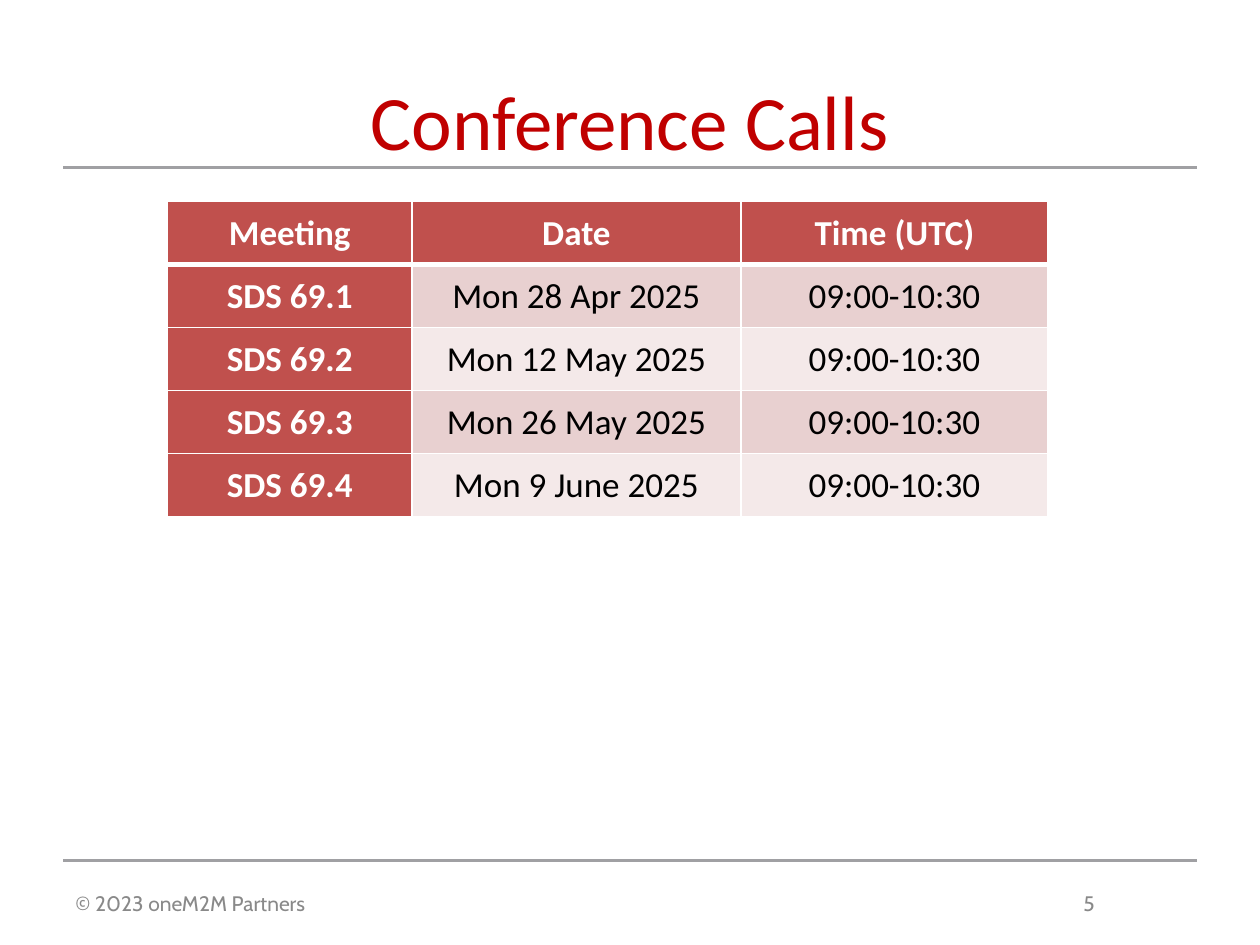
"""Build the conference calls slide with its schedule table."""
import pptx
import pptx.dml.color
import pptx.enum.shapes
import pptx.enum.text
import pptx.oxml
import pptx.util
import lxml.etree

NS = "http://schemas.openxmlformats.org/drawingml/2006/main"
Inches, Pt = pptx.util.Inches, pptx.util.Pt
PP_ALIGN, MSO_ANCHOR = pptx.enum.text.PP_ALIGN, pptx.enum.text.MSO_ANCHOR


def rgb(value):
    return pptx.dml.color.RGBColor.from_string(value)


def style(p, name, size, color, bold=False):
    for r in p.runs:
        r.font.name, r.font.size, r.font.bold = name, Pt(size), bold
        r.font.color.rgb = rgb(color)


prs = pptx.Presentation()
prs.slide_width, prs.slide_height = Inches(10), Inches(7.5)
W, H = prs.slide_width, prs.slide_height
left, right = int(W * 0.05), int(W * 0.95)
top_rule, bottom_rule = Inches(1.33), Inches(6.83)
s = prs.slides.add_slide(prs.slide_layouts[6])

for y in (bottom_rule, top_rule):
    line = s.shapes.add_connector(pptx.enum.shapes.MSO_CONNECTOR.STRAIGHT, left, y, right, y)
    line.line.color.rgb = rgb("A0A0A3")
    line.line.width = Pt(1.75)
    lxml.etree.SubElement(line._element.spPr, f"{{{NS}}}effectLst")

title = s.shapes.add_textbox(left, Inches(0.5), right - left, Inches(1.25))
tf = title.text_frame
tf.word_wrap = True
tf.margin_top = Inches(0.08)
tf.text = "Conference Calls"
p = tf.paragraphs[0]
p.alignment = PP_ALIGN.CENTER
style(p, "Calibri", 44, "C00000")

footer = s.shapes.add_textbox(left, bottom_rule, right - left, H - bottom_rule)
tf = footer.text_frame
tf.word_wrap = True
tf.vertical_anchor = MSO_ANCHOR.MIDDLE
tf.text = "© 2023 oneM2M Partners\t5"
p = tf.paragraphs[0]
tabs = lxml.etree.SubElement(p._p.get_or_add_pPr(), f"{{{NS}}}tabLst")
lxml.etree.SubElement(tabs, f"{{{NS}}}tab", pos=str(Inches(8)), algn="l")
style(p, "Cabin", 12, "898989")

dates = ["Mon 28 Apr 2025", "Mon 12 May 2025", "Mon 26 May 2025", "Mon 9 June 2025"]
rows = [["Meeting", "Date", "Time (UTC)"]]
rows += [[f"SDS 69.{n}", date, "09:00-10:30"] for n, date in enumerate(dates, 1)]
widths = [1.94, 2.61, 2.44]
row_height = 0.5

frame = s.shapes.add_table(len(rows), len(widths), Inches(1.33), Inches(1.6),
                           Inches(sum(widths)), Inches(row_height * len(rows)))
table = frame.table
for column, width in zip(table.columns, widths):
    column.width = Inches(width)

for i, texts in enumerate(rows):
    table.rows[i].height = Inches(row_height)
    for j, text in enumerate(texts):
        cell = table.cell(i, j)
        heading = i == 0 or j == 0
        cell.text = text
        cell.vertical_anchor = MSO_ANCHOR.MIDDLE
        cell.margin_left = cell.margin_right = Inches(0.07)
        cell.margin_top = cell.margin_bottom = 0
        p = cell.text_frame.paragraphs[0]
        p.alignment = PP_ALIGN.CENTER
        style(p, "Calibri", 20, "FFFFFF" if heading else "000000", heading)
        for side in "LRTB":
            thick = (i, side) in ((0, "B"), (1, "T"))
            cell._tc.get_or_add_tcPr().append(pptx.oxml.parse_xml(
                f'<a:ln{side} xmlns:a="{NS}" w="{Pt(3 if thick else 1)}">'
                '<a:solidFill><a:srgbClr val="FFFFFF"/></a:solidFill>'
                f'</a:ln{side}>'))
        cell.fill.solid()
        band = "E8D0D0" if i % 2 else "F4E9E9"
        cell.fill.fore_color.rgb = rgb("C0504D" if heading else band)

prs.save("out.pptx")
